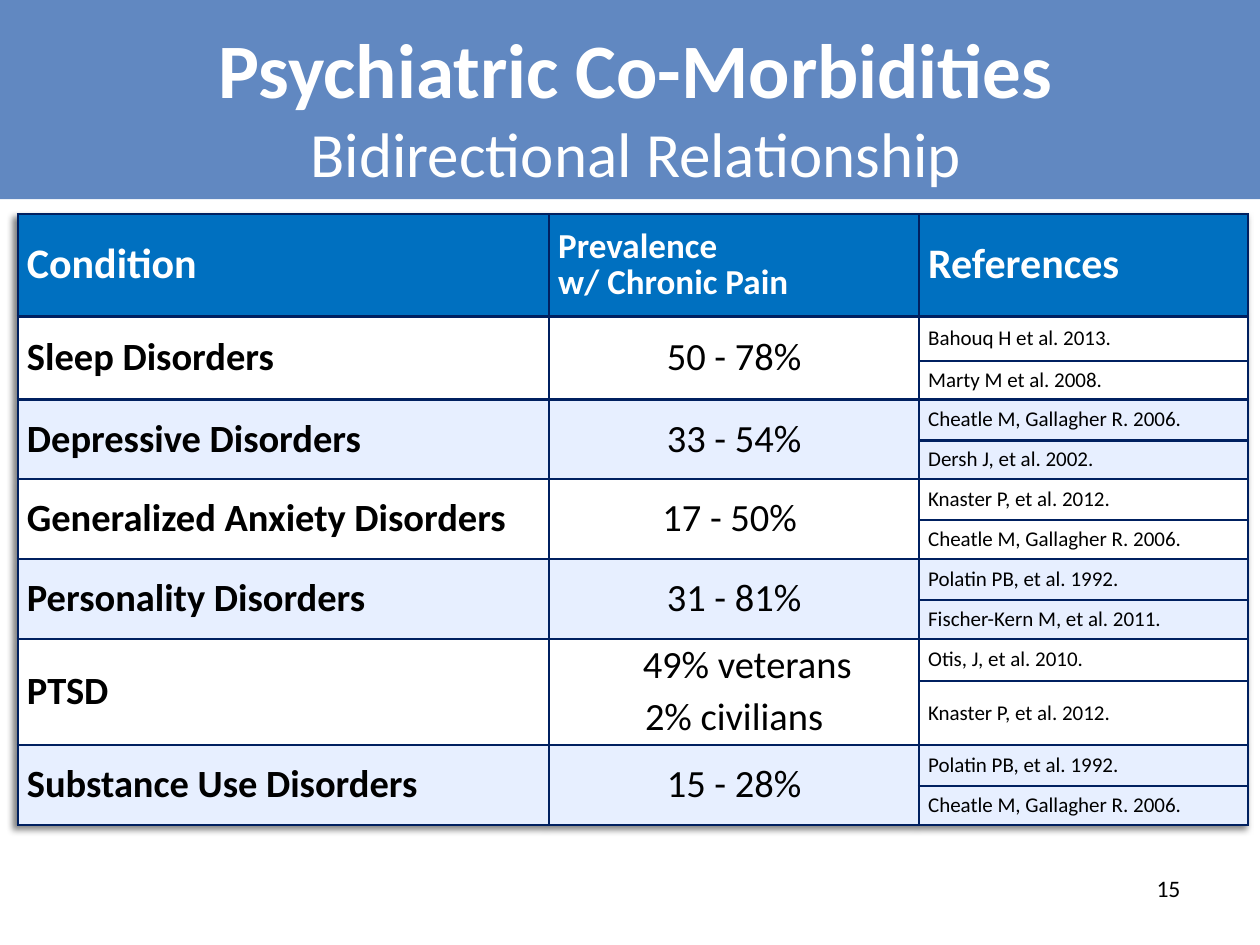
from lxml import etree
from pptx import Presentation
from pptx.dml.color import RGBColor
from pptx.enum import shapes, text
from pptx.oxml import ns
from pptx.util import Pt

COLORS = {"banner": "6188C1", "header": "0070C0", "border": "002060",
          "plain": "FFFFFF", "band": "E7EFFF", "light": "FFFFFF", "dark": "000000"}
LEFT, CENTER = text.PP_ALIGN.LEFT, text.PP_ALIGN.CENTER
MIDDLE = text.MSO_ANCHOR.MIDDLE

HEADER = [(["Condition"], 24), (["Prevalence", "w/ Chronic Pain"], 20), (["References"], 24)]
CONDITIONS = [
    ("Sleep Disorders", ["50 - 78%"], ["Bahouq H et al. 2013.", "Marty M et al. 2008."]),
    ("Depressive Disorders", ["33 - 54%"],
     ["Cheatle M, Gallagher R. 2006.", "Dersh J, et al. 2002."]),
    ("Generalized Anxiety Disorders", ["17 - 50% "],
     ["Knaster P, et al. 2012.", "Cheatle M, Gallagher R. 2006."]),
    ("Personality Disorders", ["31 - 81%"],
     ["Polatin PB, et al. 1992.", "Fischer-Kern M, et al. 2011."]),
    ("PTSD", ["49% veterans", "2% civilians"],
     ["Otis, J, et al. 2010.", "Knaster P, et al. 2012."]),
    ("Substance Use Disorders", ["15 - 28%"],
     ["Polatin PB, et al. 1992.", "Cheatle M, Gallagher R. 2006."]),
]
COLUMN_WIDTHS = [303.6, 211.4, 188]
ROW_HEIGHTS = [58.5, 25.2, 22.2] + [23.4, 22.2] * 3 + [24.2, 36.6] + [23.4, 22.2]


def apply(target, **values):
    for name, value in values.items():
        setattr(target, name, value)


class Deck:
    font = "Calibri"

    def __init__(self, width, height):
        self.file = Presentation()
        apply(self.file, slide_width=Pt(width), slide_height=Pt(height))
        self.slide = self.file.slides.add_slide(self.file.slide_layouts[6])

    def color(self, name):
        return RGBColor.from_string(COLORS[name])

    def fill(self, part, name):
        part.fill.solid()
        part.fill.fore_color.rgb = self.color(name)

    def add_words(self, paragraph, words, size, color, bold=False):
        run = paragraph.add_run()
        run.text = words
        apply(run.font, name=self.font, size=Pt(size), bold=bold)
        run.font.color.rgb = self.color(color)

    def banner(self, width, height):
        band = self.slide.shapes.add_shape(
            shapes.MSO_SHAPE.RECTANGLE, 0, 0, Pt(width), Pt(height))
        band.shadow.inherit = False
        self.fill(band, "banner")
        band.line.fill.background()

    def text_box(self, place, lines, color, align=LEFT, anchor=text.MSO_ANCHOR.TOP):
        """Put (words, size, bold) lines into one paragraph with line breaks."""
        frame = self.slide.shapes.add_textbox(*map(Pt, place)).text_frame
        apply(frame, word_wrap=True, vertical_anchor=anchor)
        paragraph = frame.paragraphs[0]
        paragraph.alignment = align
        for index, (words, size, bold) in enumerate(lines):
            if index:
                paragraph.add_line_break()
            self.add_words(paragraph, words, size, color, bold)

    def table(self, left, top, widths, heights):
        grid = self.slide.shapes.add_table(
            len(heights), len(widths), Pt(left), Pt(top), Pt(sum(widths)), Pt(sum(heights))).table
        apply(grid, horz_banding=False)
        for column, width in zip(grid.columns, widths):
            column.width = Pt(width)
        for row, height in zip(grid.rows, heights):
            row.height = Pt(height)
        effects = etree.SubElement(grid._tbl.tblPr, ns.qn("a:effectLst"))
        shadow = etree.SubElement(effects, ns.qn("a:outerShdw"), blurRad=str(Pt(4)),
                                  dist=str(Pt(3)), dir="8100000", algn="tr", rotWithShape="0")
        shade = etree.SubElement(shadow, ns.qn("a:prstClr"), val="black")
        etree.SubElement(shade, ns.qn("a:alpha"), val="50000")
        # The effect list must come before the table style id.
        grid._tbl.tblPr.insert(0, effects)
        return grid

    def cell_frame(self, cell, fill):
        """Set margins, borders and fill; borders precede the fill in the XML."""
        apply(cell, vertical_anchor=MIDDLE, margin_left=Pt(5.2), margin_right=Pt(5.2),
              margin_top=Pt(2.6), margin_bottom=Pt(2.6))
        properties = cell._tc.get_or_add_tcPr()
        for side in ("lnL", "lnR", "lnT", "lnB"):
            line = etree.SubElement(properties, ns.qn(f"a:{side}"), w=str(Pt(1.5)))
            solid = etree.SubElement(line, ns.qn("a:solidFill"))
            etree.SubElement(solid, ns.qn("a:srgbClr"), val=COLORS["border"])
        self.fill(cell, fill)

    def cell_text(self, cell, lines, size, color="dark", bold=False, align=LEFT,
                  spacing=0.9, gap=0):
        frame = cell.text_frame
        for index, words in enumerate(lines):
            paragraph = frame.add_paragraph() if index else frame.paragraphs[0]
            apply(paragraph, alignment=align, line_spacing=spacing)
            if index and gap:
                paragraph.space_before = Pt(gap)
            self.add_words(paragraph, words, size, color, bold)


def main():
    deck = Deck(720, 540)
    deck.banner(720, 113.8)
    deck.text_box((653.8, 496, 54, 24), [("15", 13.5, False)], "dark")
    deck.text_box((36, 10, 655, 101),
                  [("Psychiatric Co-Morbidities", 44, True),
                   ("Bidirectional Relationship", 36, False)], "light", CENTER, MIDDLE)

    grid = deck.table(10.2, 122.4, COLUMN_WIDTHS, ROW_HEIGHTS)
    for column, (lines, size) in enumerate(HEADER):
        cell = grid.cell(0, column)
        deck.cell_frame(cell, "header")
        deck.cell_text(cell, lines, size, "light", bold=True, spacing=0.85)

    for index, (condition, prevalence, references) in enumerate(CONDITIONS):
        first = 1 + 2 * index
        for row in (first, first + 1):
            for column in range(len(COLUMN_WIDTHS)):
                deck.cell_frame(grid.cell(row, column), "band" if index % 2 else "plain")
        for column in (0, 1):
            grid.cell(first, column).merge(grid.cell(first + 1, column))
        deck.cell_text(grid.cell(first, 0), [condition], 22, bold=True)
        rates = grid.cell(first, 1)
        deck.cell_text(rates, prevalence, 22, align=CENTER, gap=6)
        if len(prevalence) > 1:
            rates.text_frame.paragraphs[0]._p.get_or_add_pPr().set("marL", str(Pt(15)))
        for offset, reference in enumerate(references):
            deck.cell_text(grid.cell(first + offset, 2), [reference], 12)

    deck.file.save("out.pptx")


if __name__ == "__main__":
    main()
